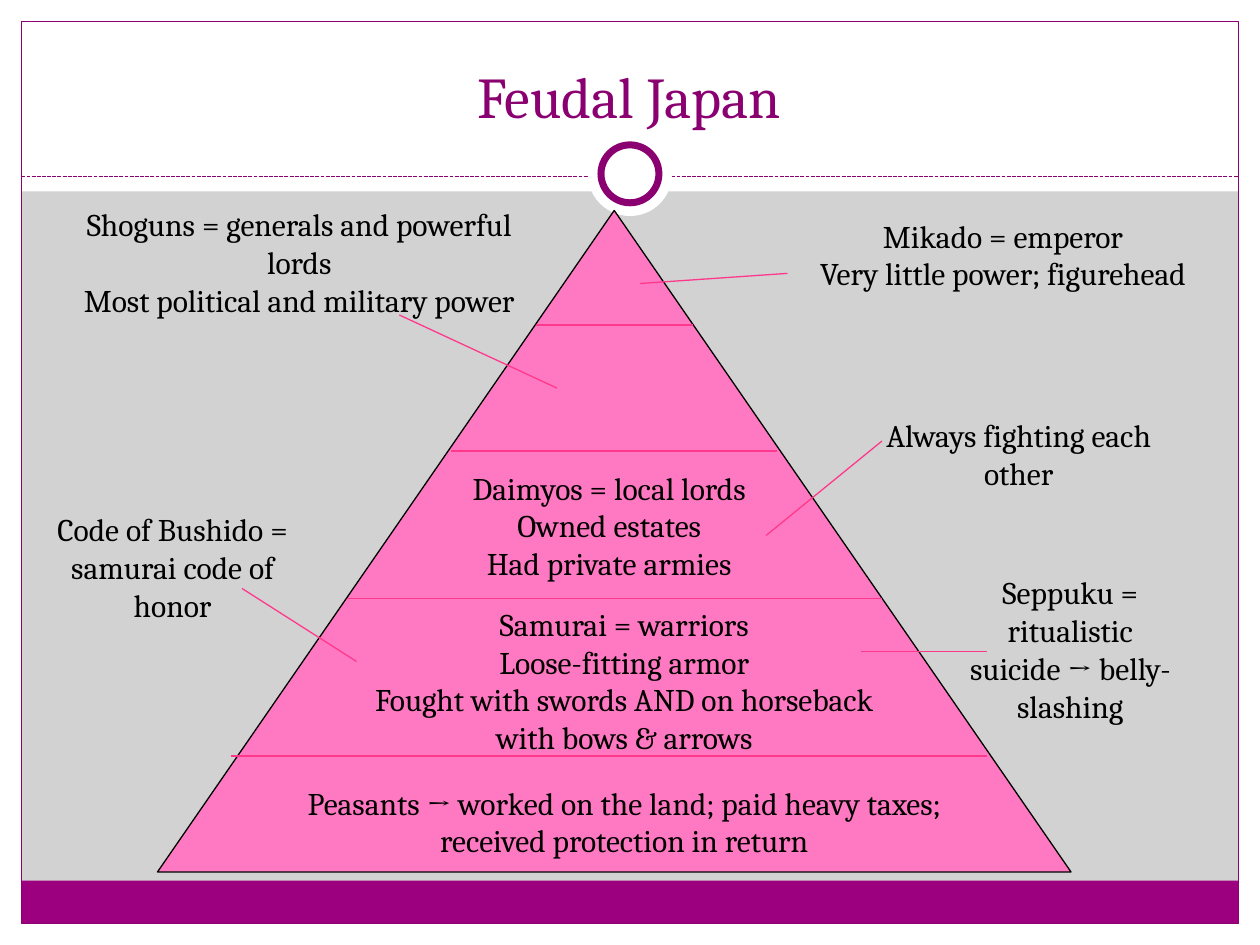
from lxml import etree
from pptx import Presentation
from pptx.dml.color import RGBColor
from pptx.enum.dml import MSO_LINE
from pptx.enum.shapes import MSO_CONNECTOR, MSO_SHAPE
from pptx.enum.text import MSO_ANCHOR, PP_ALIGN
from pptx.oxml.ns import qn
from pptx.util import Inches, Pt

RECT, OVAL, TRIANGLE = MSO_SHAPE.RECTANGLE, MSO_SHAPE.OVAL, MSO_SHAPE.ISOSCELES_TRIANGLE
STRAIGHT, DASH = MSO_CONNECTOR.STRAIGHT, MSO_LINE.SQUARE_DOT
TOP, BOTTOM, CENTER = MSO_ANCHOR.TOP, MSO_ANCHOR.BOTTOM, PP_ALIGN.CENTER

WHITE = RGBColor(0xFF, 0xFF, 0xFF)
BLACK = RGBColor(0, 0, 0)
GRAY = RGBColor(0xD2, 0xD2, 0xD2)
PURPLE = RGBColor(0x8A, 0x00, 0x70)
FOOTER = RGBColor(0x9C, 0x00, 0x7F)
PINK = RGBColor(0xFF, 0x79, 0xC2)
ROSE = RGBColor(0xFF, 0x38, 0x8C)

W, H, MARGIN = 10, 7.5, 0.17
HEADER_H, RULE_Y, RING_Y = 1.52, 1.4, 1.38
FONT = "Cambria"

TIERS = [
    ((3.42, 3.67, 2.83, 1.01), ["Daimyos = local lords", "Owned estates", "Had private armies"]),
    ((2.83, 4.75, 4.25, 1.31), ["Samurai = warriors", "Loose-fitting armor",
                                "Fought with swords AND on horseback with bows & arrows"]),
    ((2.08, 6.17, 5.75, 0.71), ["Peasants → worked on the land; paid heavy taxes; "
                                "received protection in return"]),
]
DIVIDERS = [(4.25, 5.5, 2.58), (3.58, 6.17, 3.58), (2.75, 7, 4.75), (1.83, 7.83, 6)]
CALLOUTS = [
    ((6.25, 1.67, 3.42, 0.71), ["Mikado = emperor", "Very little power; figurehead"],
     (5.08, 2.25, 6.25, 2.17)),
    ((0.5, 1.58, 3.75, 1.31), ["Shoguns = generals and powerful lords",
                               "Most political and military power"],
     (4.42, 3.08, 3.17, 2.5)),
    ((6.92, 3.25, 2.33, 0.71), ["Always fighting each other"], (6.08, 4.25, 7, 3.5)),
    ((0.33, 4, 2.08, 1.01), ["Code of Bushido = samurai code of honor"],
     (2.83, 5.25, 1.92, 4.67)),
    ((7.58, 4.5, 1.83, 1.31), ["Seppuku = ritualistic suicide → belly-slashing"],
     (6.83, 5.17, 7.83, 5.17)),
]


def add_box(slide, kind, box, fill=None, line=None, width=0.75):
    sp = slide.shapes.add_shape(kind, *map(Inches, box))
    sp.shadow.inherit = False
    if fill is None:
        sp.fill.background()
    else:
        sp.fill.solid()
        sp.fill.fore_color.rgb = fill
    if line is None:
        sp.line.fill.background()
    else:
        sp.line.color.rgb = line
        sp.line.width = Pt(width)


def add_line(slide, ends, color=ROSE, dash=None):
    cx = slide.shapes.add_connector(STRAIGHT, *map(Inches, ends))
    cx.line.color.rgb = color
    cx.line.width = Pt(0.75)
    if dash is not None:
        cx.line.dash_style = dash
    etree.SubElement(cx._element.spPr, qn("a:effectLst"))


def add_text(slide, box, lines, size=18, color=BLACK, anchor=TOP):
    tf = slide.shapes.add_textbox(*map(Inches, box)).text_frame
    tf.word_wrap = True
    tf.vertical_anchor = anchor
    for i, text in enumerate(lines):
        p = tf.add_paragraph() if i else tf.paragraphs[0]
        p.alignment = CENTER
        r = p.add_run()
        r.text = text
        r.font.name = FONT
        r.font.size = Pt(size)
        r.font.color.rgb = color


def add_ring(slide, d, **style):
    add_box(slide, OVAL, (W / 2 - d / 2, RING_Y - d / 2, d, d), fill=WHITE, **style)


def add_frame(slide):
    inner_w, inner_h = W - 2 * MARGIN, H - 2 * MARGIN
    for box in [(0, H - MARGIN, W, MARGIN), (0, 0, W, HEADER_H),
                (0, 0, MARGIN, H), (W - MARGIN, 0, MARGIN, H)]:
        add_box(slide, RECT, box, fill=WHITE)
    add_box(slide, RECT, (MARGIN, 6.99, inner_w, 0.34), fill=FOOTER)
    add_box(slide, RECT, (MARGIN, MARGIN, inner_w, inner_h), line=PURPLE)
    add_line(slide, (MARGIN, RULE_Y, W - MARGIN, RULE_Y), color=PURPLE, dash=DASH)
    add_ring(slide, 0.67)
    add_ring(slide, 0.46, line=PURPLE, width=4)


def main():
    prs = Presentation()
    prs.slide_width, prs.slide_height = Inches(W), Inches(H)
    slide = prs.slides.add_slide(prs.slide_layouts[6])
    slide.background.fill.solid()
    slide.background.fill.fore_color.rgb = GRAY

    add_frame(slide)
    add_text(slide, (0.33, 0.25, 9.33, 0.83), ["Feudal Japan"],
             size=33, color=PURPLE, anchor=BOTTOM)
    add_box(slide, TRIANGLE, (1.25, 1.67, 7.25, 5.25), fill=PINK, line=BLACK)
    for left, right, y in DIVIDERS:
        add_line(slide, (left, y, right, y))
    for box, lines in TIERS:
        add_text(slide, box, lines)
    for box, lines, pointer in CALLOUTS:
        add_line(slide, pointer)
        add_text(slide, box, lines)
    prs.save("out.pptx")


if __name__ == "__main__":
    main()
